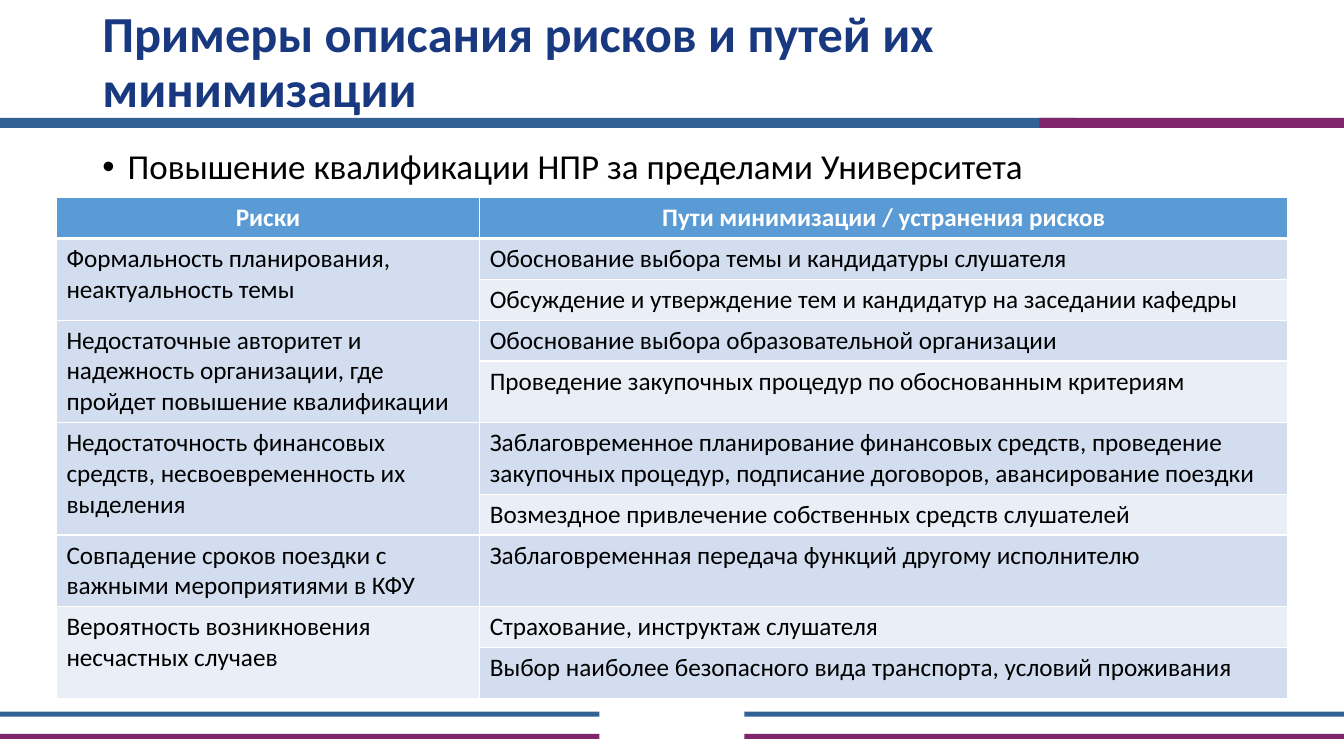
from lxml import etree
from pptx import Presentation
from pptx import util as u
from pptx.dml.color import RGBColor
from pptx.enum import shapes, text
from pptx.oxml import ns

BLUE = RGBColor(0x32, 0x62, 0x95)
PLUM = RGBColor(0x80, 0x27, 0x6C)
NAVY = RGBColor(0x18, 0x38, 0x80)
BLACK = RGBColor(0, 0, 0)
WHITE = RGBColor(255, 255, 255)
HEADER = RGBColor(0x5B, 0x9B, 0xD5)
BANDS = (RGBColor(0xEA, 0xEF, 0xF7), RGBColor(0xD2, 0xDE, 0xEF))

RISKS = [
    ("Формальность планирования, неактуальность темы",
     ["Обоснование выбора темы и кандидатуры слушателя",
      "Обсуждение и утверждение тем и кандидатур на заседании кафедры"]),
    ("Недостаточные авторитет и надежность организации, где пройдет повышение квалификации",
     ["Обоснование выбора образовательной организации",
      "Проведение закупочных процедур по обоснованным критериям"]),
    ("Недостаточность финансовых средств, несвоевременность их выделения",
     ["Заблаговременное планирование финансовых средств, проведение закупочных процедур, "
      "подписание договоров, авансирование поездки",
      "Возмездное привлечение собственных средств слушателей"]),
    ("Совпадение сроков поездки с важными мероприятиями в КФУ",
     ["Заблаговременная передача функций другому исполнителю"]),
    ("Вероятность возникновения несчастных случаев",
     ["Страхование, инструктаж слушателя",
      "Выбор наиболее безопасного вида транспорта, условий проживания"]),
]
COLUMN_WIDTHS = (302.4, 577.4)
ROW_HEIGHTS = (28.1, 25.9, 28.1, 28.1, 33.8, 35.3, 27.4, 49, 28.1, 36.7)


def apply(target, values):
    for key, value in values.items():
        setattr(target, key, value)


class RiskSlide:
    font_name = "Calibri"

    def __init__(self, deck):
        self.slide = deck.slides.add_slide(deck.slide_layouts[1])

    def add_wording(self, paragraph, wording, color, size, bold=False, **layout):
        apply(paragraph, layout)
        run = paragraph.add_run()
        run.text = wording
        apply(run.font, {"name": self.font_name, "size": u.Pt(size), "bold": bold})
        run.font.color.rgb = color

    def placeholder(self, index, box, anchor):
        holder = self.slide.placeholders[index]
        apply(holder, dict(zip(("left", "top", "width", "height"), map(u.Pt, box))))
        apply(holder.text_frame, {"word_wrap": True, "vertical_anchor": anchor,
                                  "auto_size": text.MSO_AUTO_SIZE.NONE})
        return holder.text_frame.paragraphs[0]

    def title(self, wording, box):
        heading = self.placeholder(0, box, text.MSO_ANCHOR.MIDDLE)
        self.add_wording(heading, wording, NAVY, 36, True,
                         alignment=text.PP_ALIGN.LEFT, line_spacing=0.9)

    def bullet(self, wording, box):
        topic = self.placeholder(1, box, text.MSO_ANCHOR.TOP)
        properties = topic._p.get_or_add_pPr()
        properties.set("marL", str(u.Pt(18)))
        properties.set("indent", str(-u.Pt(18)))
        etree.SubElement(properties, ns.qn("a:buChar"), char="•")
        self.add_wording(topic, wording, BLACK, 25, line_spacing=0.9, space_before=u.Pt(0))

    def bar(self, color, *box):
        stripe = self.slide.shapes.add_shape(shapes.MSO_SHAPE.RECTANGLE, *map(u.Pt, box))
        stripe.fill.solid()
        stripe.fill.fore_color.rgb = color
        stripe.line.fill.background()
        stripe.shadow.inherit = False

    def borders(self, cell, row):
        widths = {"L": 1, "R": 1, "T": 3 if row == 1 else 1, "B": 3 if row == 0 else 1}
        properties = cell._tc.get_or_add_tcPr()
        for side, width in widths.items():
            edge = etree.SubElement(properties, ns.qn(f"a:ln{side}"), w=str(u.Pt(width)))
            paint = etree.SubElement(edge, ns.qn("a:solidFill"))
            etree.SubElement(paint, ns.qn("a:srgbClr"), val=str(WHITE))

    def table(self, headings, risks, left, top):
        grid = self.slide.shapes.add_table(
            len(ROW_HEIGHTS), len(COLUMN_WIDTHS), u.Pt(left), u.Pt(top),
            u.Pt(sum(COLUMN_WIDTHS)), u.Pt(sum(ROW_HEIGHTS))).table
        for column, width in zip(grid.columns, COLUMN_WIDTHS):
            column.width = u.Pt(width)
        for row, height in enumerate(ROW_HEIGHTS):
            grid.rows[row].height = u.Pt(height)
            for cell in grid.rows[row].cells:
                self.borders(cell, row)
                cell.fill.solid()
                cell.fill.fore_color.rgb = BANDS[row % 2] if row else HEADER
        for column, heading in enumerate(headings):
            self.add_wording(grid.cell(0, column).text_frame.paragraphs[0], heading, WHITE, 18,
                             True, alignment=text.PP_ALIGN.CENTER)
        row = 1
        for risk, remedies in risks:
            risk_cell = grid.cell(row, 0)
            if len(remedies) > 1:
                risk_cell.merge(grid.cell(row + len(remedies) - 1, 0))
            self.add_wording(risk_cell.text_frame.paragraphs[0], risk, BLACK, 18)
            for remedy in remedies:
                self.add_wording(grid.cell(row, 1).text_frame.paragraphs[0], remedy, BLACK, 18)
                row += 1


def main():
    deck = Presentation()
    apply(deck, {"slide_width": u.Pt(960), "slide_height": u.Pt(540)})
    page = RiskSlide(deck)
    page.bar(BLUE, 0, 84.2, 769, 7.2)
    page.bar(PLUM, 742.5, 84.2, 217.5, 7.2)
    for left in (0, 531.8):
        for color, top in ((BLUE, 508.3), (PLUM, 524.2)):
            page.bar(color, left, top, 428.2, 3.6)
    page.title("Примеры описания рисков и путей их минимизации", (66, 16.6, 828, 57.6))
    page.bullet("Повышение квалификации НПР за пределами Университета", (66, 103, 869, 37.4))
    page.table(("Риски", "Пути минимизации / устранения рисков"), RISKS, 40.3, 141.1)
    deck.save("out.pptx")


if __name__ == "__main__":
    main()
